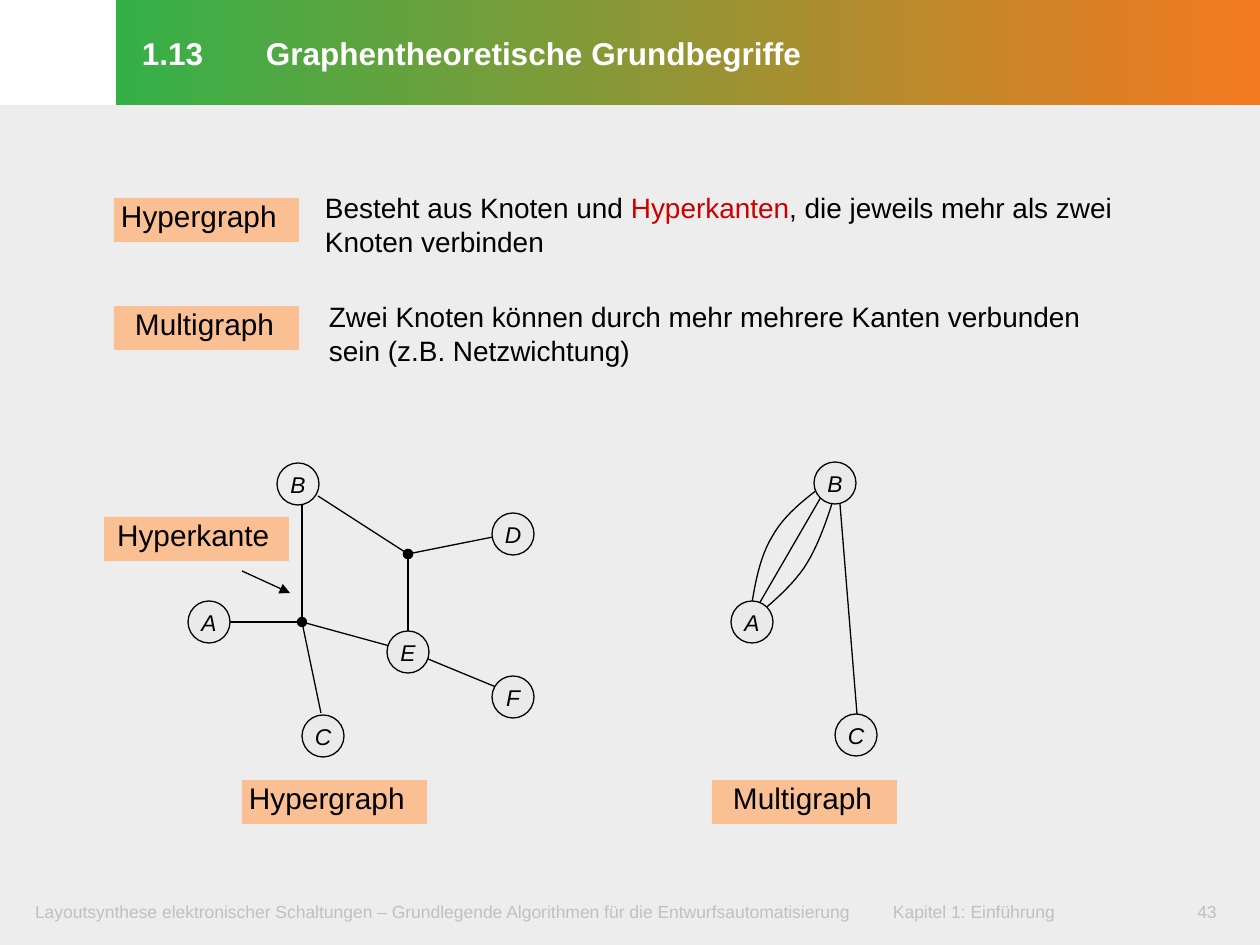
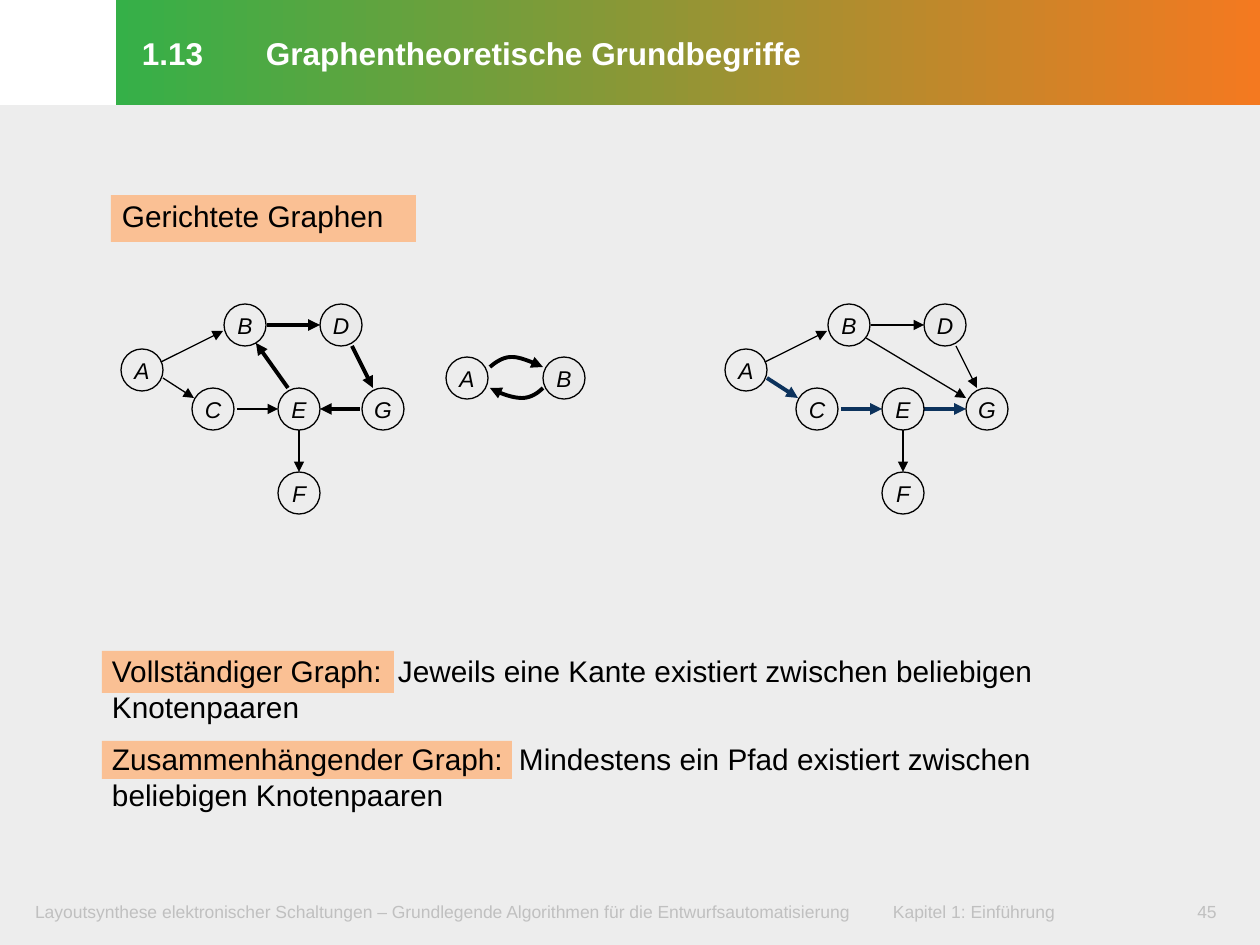
from lxml import etree
from pptx import Presentation
from pptx.dml.color import RGBColor
from pptx.enum.shapes import MSO_CONNECTOR, MSO_SHAPE
from pptx.enum.text import MSO_ANCHOR, MSO_AUTO_SIZE, PP_ALIGN
from pptx.oxml.ns import qn
from pptx.util import Emu, Pt

STRAIGHT = MSO_CONNECTOR.STRAIGHT
RECT, OVAL = MSO_SHAPE.RECTANGLE, MSO_SHAPE.OVAL
TOP, MIDDLE = MSO_ANCHOR.TOP, MSO_ANCHOR.MIDDLE
LEFT, CENTER = PP_ALIGN.LEFT, PP_ALIGN.CENTER
FIXED = MSO_AUTO_SIZE.NONE

BLACK = RGBColor(0, 0, 0)
WHITE = RGBColor(255, 255, 255)
PANEL = RGBColor(0xED, 0xED, 0xED)
PEACH = RGBColor(0xFA, 0xC0, 0x94)
GREEN = RGBColor(0x35, 0xB0, 0x48)
ORANGE = RGBColor(0xF4, 0x79, 0x20)
SILVER = RGBColor(0xC0, 0xC0, 0xC0)
DISC = RGBColor(0xEA, 0xEA, 0xEA)
RED = RGBColor(0xCC, 0, 0)
NAVY = RGBColor(0x0C, 0x32, 0x5C)

FONT = "Arial"
SCALE = 914400 / 126
SIZE = 42
THIN, THICK = 0.75, 2.25

TITLE = "1.13\tGraphentheoretische Grundbegriffe"
COURSE = ("Layoutsynthese elektronischer Schaltungen – "
          "Grundlegende Algorithmen für die Entwurfsautomatisierung")
PART = "Kapitel 1: Einführung"

SPOTS = {"A": (121, 349), "B": (224, 304), "C": (192, 388), "D": (320, 304),
         "E": (278, 388), "F": (278, 472), "G": (362, 388)}
EDGES = {"AB": (161, 362, 223, 331), "AC": (163, 378, 194, 398),
         "CE": (237, 409, 278, 409), "EF": (299, 430, 299, 472),
         "BD": (267, 325, 320, 325), "DG": (352, 346, 373, 388),
         "GE": (360, 409, 320, 409), "EB": (288, 388, 256, 343),
         "EG": (320, 409, 362, 409), "BG": (262, 338, 362, 398)}
SHARED = ["AB", "AC", "CE", "EF", "BD", "DG"]


def px(value):
    return Emu(round(value * SCALE))


def write(shape, paras, size=17, color=BLACK, bold=False, italic=False,
          align=LEFT, anchor=TOP, inset=(0, 0, 0, 0), tab=None, lead=None):
    frame = shape.text_frame
    frame.word_wrap = True
    frame.auto_size = FIXED
    frame.vertical_anchor = anchor
    (frame.margin_left, frame.margin_top,
     frame.margin_right, frame.margin_bottom) = map(px, inset)
    for i, runs in enumerate([paras] if isinstance(paras, str) else paras):
        para = frame.add_paragraph() if i else frame.paragraphs[0]
        para.alignment = align
        if lead:
            para.line_spacing = Pt(lead)
        if tab:
            stops = etree.SubElement(para._p.get_or_add_pPr(), qn("a:tabLst"))
            etree.SubElement(stops, qn("a:tab"), pos=str(px(tab)), algn="l")
        for words, tint in [(runs, color)] if isinstance(runs, str) else runs:
            run = para.add_run()
            run.text = words
            font = run.font
            font.name, font.size = FONT, Pt(size)
            font.bold, font.italic = bold, italic
            font.color.rgb = tint


def label(slide, x, y, w, h, paras, **style):
    write(slide.shapes.add_textbox(px(x), px(y), px(w), px(h)), paras, **style)


def block(slide, kind, x, y, w, h, fill=None, edge=None):
    shape = slide.shapes.add_shape(kind, px(x), px(y), px(w), px(h))
    shape.shadow.inherit = False
    if fill is None:
        shape.fill.background()
    else:
        shape.fill.solid()
        shape.fill.fore_color.rgb = fill
    if edge is None:
        shape.line.fill.background()
    else:
        shape.line.color.rgb = edge
        shape.line.width = Pt(THIN)
    return shape


def tag(slide, x, y, words, indent, w=185, h=44, drop=0):
    shape = block(slide, RECT, x, y, w, h, PEACH)
    write(shape, words, inset=(indent, drop, 0, 0))


def nodes(slide, spots, clear="", dx=0):
    for name, (x, y) in spots.items():
        fill = None if name in clear else DISC
        shape = block(slide, OVAL, x + dx, y, SIZE, SIZE, fill, BLACK)
        write(shape, name, size=13, italic=True, align=CENTER, anchor=MIDDLE)


def stroke(shape, color, width, tip):
    shape.line.color.rgb = color
    shape.line.width = Pt(width)
    if tip:
        etree.SubElement(shape.line._get_or_add_ln(), qn("a:tailEnd"), type=tip)


def edge(slide, ends, color=BLACK, width=THIN, tip=None, dx=0):
    x1, y1, x2, y2 = ends
    wire = slide.shapes.add_connector(
        STRAIGHT, px(x1 + dx), px(y1), px(x2 + dx), px(y2))
    stroke(wire, color, width, tip)
    etree.SubElement(wire._element.spPr, qn("a:effectLst"))


def curve(slide, knots, width=THIN, tip=None, steps=12):
    points = []
    for i in range(0, len(knots) - 1, 3):
        for k in range(1, steps + 1):
            t = k / steps
            mix = ((1 - t) ** 3, 3 * t * (1 - t) ** 2,
                   3 * t * t * (1 - t), t ** 3)
            points.append(tuple(
                px(sum(m * knot[axis] for m, knot in zip(mix, knots[i:i + 4])))
                for axis in (0, 1)))
    pen = slide.shapes.build_freeform(px(knots[0][0]), px(knots[0][1]))
    pen.add_line_segments(points, close=False)
    shape = pen.convert_to_shape()
    shape.shadow.inherit = False
    shape.fill.background()
    stroke(shape, BLACK, width, tip)


def digraph(slide, dx, extra, strong, tint):
    for key in SHARED + extra:
        look = (tint, THICK) if key in strong else (BLACK, THIN)
        edge(slide, EDGES[key], *look, tip="triangle", dx=dx)
    nodes(slide, SPOTS, clear="ABCEFG", dx=dx)


def start(deck, number):
    slide = deck.slides.add_slide(deck.slide_layouts[5])
    block(slide, RECT, 0, 105, 1260, 840, PANEL)
    title = slide.shapes.title
    title.left, title.top, title.width, title.height = map(
        px, (116, 0, 1144, 105))
    title.fill.gradient()
    title.fill.gradient_angle = 0
    for stop, color in zip(title.fill.gradient_stops, (GREEN, ORANGE)):
        stop.color.rgb = color
    write(title, TITLE, size=18, color=WHITE, bold=True, anchor=MIDDLE,
          inset=(26, 6, 13, 9), tab=124, lead=23.5)
    label(slide, 35, 901, 840, 24, COURSE, size=10, color=SILVER)
    label(slide, 893, 901, 200, 24, PART, size=10, color=SILVER)
    label(slide, 1170, 901, 74, 24, number, size=10, color=SILVER, align=CENTER)
    return slide


def hyper(deck):
    slide = start(deck, "43")
    tag(slide, 114, 198, "Hypergraph", 7)
    tag(slide, 114, 306, "Multigraph", 21)
    inset = (26, 6, 13, 9)
    label(slide, 299, 185, 850, 83,
          [[("Besteht aus Knoten und ", BLACK), ("Hyperkanten", RED),
            (", die jeweils mehr als zwei", BLACK)],
           "Knoten verbinden"], size=16, inset=inset)
    label(slide, 303, 294, 850, 83,
          ["Zwei Knoten können durch mehr mehrere Kanten verbunden",
           "sein (z.B. Netzwichtung)"], size=16, inset=inset)

    for ends in [(302, 505, 302, 622), (302, 622, 321, 713),
                 (302, 622, 408, 651), (408, 554, 513, 533),
                 (428, 659, 513, 694), (840, 504, 857, 714),
                 (828, 485, 755, 611)]:
        edge(slide, ends)
    for ends in [(208, 622, 302, 622), (318, 496, 408, 554),
                 (408, 631, 408, 554)]:
        edge(slide, ends, tip="oval")
    curve(slide, [(751, 610), (755, 583), (760, 557), (772, 537),
                  (784, 515), (805, 499), (825, 484)])
    curve(slide, [(751, 620), (770, 605), (790, 588), (804, 568),
                  (818, 547), (827, 520), (835, 494)])
    nodes(slide, {"A": (188, 601), "B": (277, 463), "C": (302, 715),
                  "D": (492, 513), "E": (387, 631), "F": (492, 676)},
          clear="B")
    nodes(slide, {"A": (731, 601), "B": (814, 462), "C": (835, 714)})

    tag(slide, 104, 517, "Hyperkante", 13)
    edge(slide, (242, 571, 290, 593), tip="triangle")
    tag(slide, 242, 780, "Hypergraph", 7)
    tag(slide, 712, 780, "Multigraph", 21)


def directed(deck):
    slide = start(deck, "45")
    tag(slide, 111, 195, "Gerichtete Graphen", 11, w=305, h=47, drop=3)
    digraph(slide, 0, ["GE", "EB"], {"BD", "DG", "GE", "EB"}, BLACK)
    digraph(slide, 604, ["EG", "BG"], {"AC", "CE", "EG"}, NAVY)

    nodes(slide, {"A": (446, 357), "B": (543, 357)}, clear="A")
    curve(slide, [(490, 367), (496, 362), (503, 357), (512, 357),
                  (520, 357), (532, 362), (543, 367)], THICK, "triangle")
    curve(slide, [(543, 388), (537, 394), (530, 398), (522, 398),
                  (513, 398), (501, 394), (490, 388)], THICK, "triangle")

    block(slide, RECT, 102, 651, 292, 42, PEACH)
    block(slide, RECT, 102, 741, 410, 38, PEACH)
    label(slide, 112, 653, 1106, 72,
          "Vollständiger Graph:\tJeweils eine Kante existiert zwischen "
          "beliebigen Knotenpaaren", tab=286)
    label(slide, 112, 741, 1043, 72,
          "Zusammenhängender Graph:\tMindestens ein Pfad existiert zwischen "
          "beliebigen Knotenpaaren", tab=407)


def main():
    deck = Presentation()
    deck.slide_width, deck.slide_height = px(1260), px(945)
    hyper(deck)
    directed(deck)
    deck.save("out.pptx")


if __name__ == "__main__":
    main()
